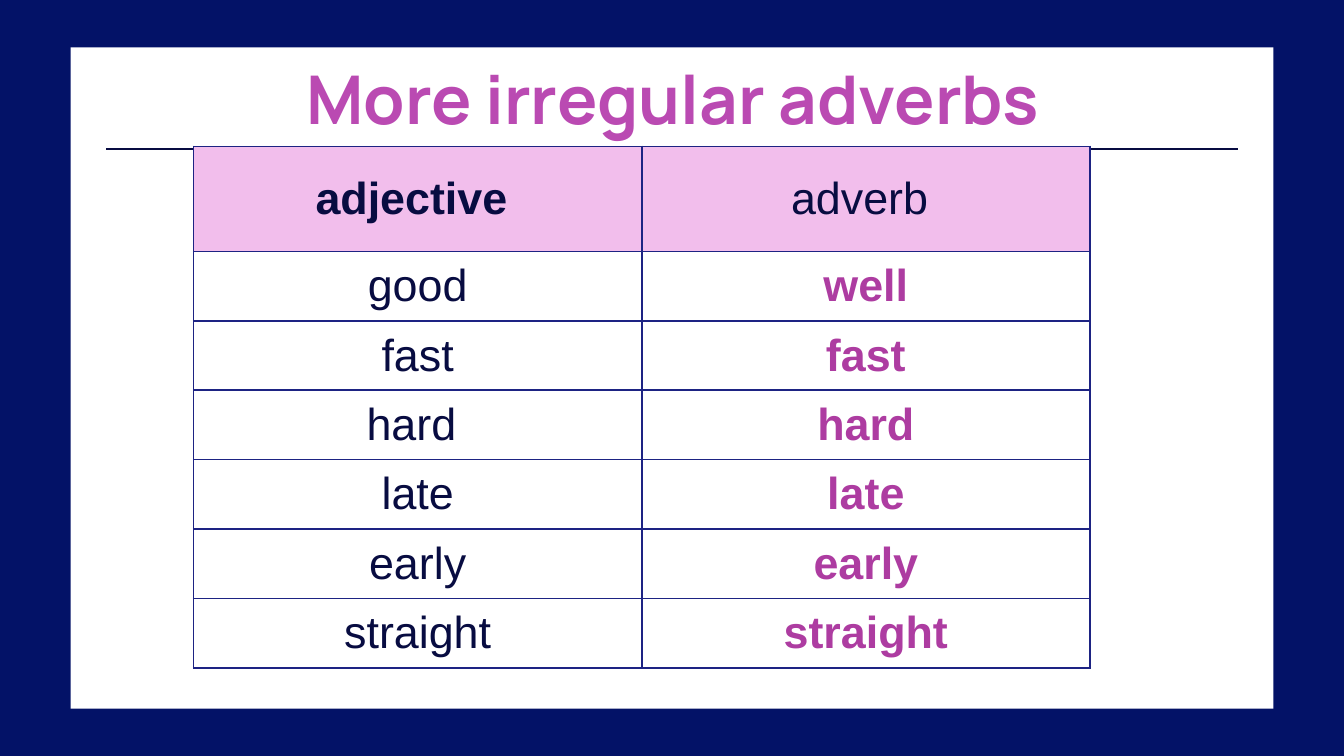
import dataclasses

import pptx
import pptx.dml.color
import pptx.enum.shapes
import pptx.enum.text
import pptx.oxml
import pptx.oxml.ns
import pptx.util
from pptx.util import Inches


@dataclasses.dataclass(frozen=True)
class Theme:
    """Colours, fonts and type sizes of the slide."""
    backdrop: str = "031267"
    panel: str = "FFFFFF"
    ink: str = "080C41"
    title: str = "BA4AB2"
    accent: str = "AD3CA1"
    header: str = "F2BEEC"
    border: str = "1D2383"
    title_font: str = "Manrope"
    body_font: str = "Arial"
    title_size: int = 36
    body_size: int = 24


THEME = Theme()
WORD_PAIRS = [
    ("adjective ", "adverb "),
    ("good", "well"),
    ("fast", "fast"),
    ("hard ", "hard"),
    ("late", "late"),
    ("early", "early"),
    ("straight", "straight"),
]


def rgb(value):
    """Turn a hex value into a colour."""
    return pptx.dml.color.RGBColor.from_string(value)


def write_centred(frame, text, font_name, size, colour, bold):
    """Write one centred line of text."""
    frame.text = text
    line = frame.paragraphs[0]
    line.alignment = pptx.enum.text.PP_ALIGN.CENTER
    font = line.runs[0].font
    font.name = font_name
    font.size = pptx.util.Pt(size)
    font.bold = bold
    font.color.rgb = rgb(colour)


def add_panel(slide, slide_width, slide_height):
    """Add the white panel, centred on the slide."""
    width, height = Inches(8.95), Inches(4.92)
    panel = slide.shapes.add_shape(
        pptx.enum.shapes.MSO_SHAPE.RECTANGLE,
        (slide_width - width) // 2, (slide_height - height) // 2,
        width, height)
    panel.shadow.inherit = False
    panel.fill.solid()
    panel.fill.fore_color.rgb = rgb(THEME.panel)
    panel.line.fill.background()


def add_rule(slide):
    """Add the thin rule below the title."""
    rule = slide.shapes.add_connector(
        pptx.enum.shapes.MSO_CONNECTOR.STRAIGHT,
        Inches(0.79), Inches(1.11), Inches(9.21), Inches(1.11))
    rule.line.color.rgb = rgb(THEME.ink)
    rule.line.width = pptx.util.Pt(0.75)
    properties = rule.element.find(pptx.oxml.ns.qn("p:spPr"))
    properties.append(pptx.oxml.parse_xml(
        f'<a:effectLst {pptx.oxml.ns.nsdecls("a")}/>'))


def set_title(slide, text):
    """Place and format the title in front of the panel."""
    title = slide.shapes.title
    title.left, title.top = Inches(0.79), Inches(0.42)
    title.width, title.height = Inches(8.43), Inches(0.62)
    frame = title.text_frame
    frame.margin_left = frame.margin_right = Inches(0.1)
    frame.margin_top = frame.margin_bottom = Inches(0.1)
    frame.vertical_anchor = pptx.enum.text.MSO_ANCHOR.MIDDLE
    frame.auto_size = pptx.enum.text.MSO_AUTO_SIZE.NONE
    write_centred(frame, text, THEME.title_font, THEME.title_size,
                  THEME.title, True)
    title.element.getparent().append(title.element)


def set_borders(cell):
    """Give a cell a thin border on all sides."""
    properties = cell._tc.get_or_add_tcPr()
    for side in ("lnL", "lnR", "lnT", "lnB"):
        properties.append(pptx.oxml.parse_xml(
            f'<a:{side} {pptx.oxml.ns.nsdecls("a")} w="{pptx.util.Pt(1)}">'
            f'<a:solidFill><a:srgbClr val="{THEME.border}"/></a:solidFill>'
            f'</a:{side}>'))


def format_cell(cell, text, is_header, is_adverb):
    """Fill one cell according to its row and column."""
    set_borders(cell)
    if is_header:
        cell.fill.solid()
        cell.fill.fore_color.rgb = rgb(THEME.header)
    else:
        cell.fill.background()
    cell.vertical_anchor = pptx.enum.text.MSO_ANCHOR.MIDDLE
    colour = THEME.accent if is_adverb and not is_header else THEME.ink
    write_centred(cell.text_frame, text, THEME.body_font, THEME.body_size,
                  colour, is_header != is_adverb)


def add_word_table(slide, pairs):
    """Add the table of adjectives and adverbs."""
    height, header_height = Inches(3.88), Inches(0.78)
    words = slide.shapes.add_table(
        len(pairs), 2, Inches(1.44), Inches(1.09), Inches(6.67), height).table
    words.first_row = words.horz_banding = False
    for row_index, pair in enumerate(pairs):
        is_header = row_index == 0
        words.rows[row_index].height = (
            header_height if is_header
            else (height - header_height) // (len(pairs) - 1))
        for column_index, word in enumerate(pair):
            format_cell(words.cell(row_index, column_index), word,
                        is_header, column_index == 1)


def main():
    """Build the slide and save it."""
    presentation = pptx.Presentation()
    presentation.slide_width = Inches(10)
    presentation.slide_height = presentation.slide_width * 9 // 16
    slide = presentation.slides.add_slide(presentation.slide_layouts[5])
    slide.background.fill.solid()
    slide.background.fill.fore_color.rgb = rgb(THEME.backdrop)
    add_panel(slide, presentation.slide_width, presentation.slide_height)
    add_rule(slide)
    set_title(slide, "More irregular adverbs")
    add_word_table(slide, WORD_PAIRS)
    presentation.save("out.pptx")


if __name__ == "__main__":
    main()
